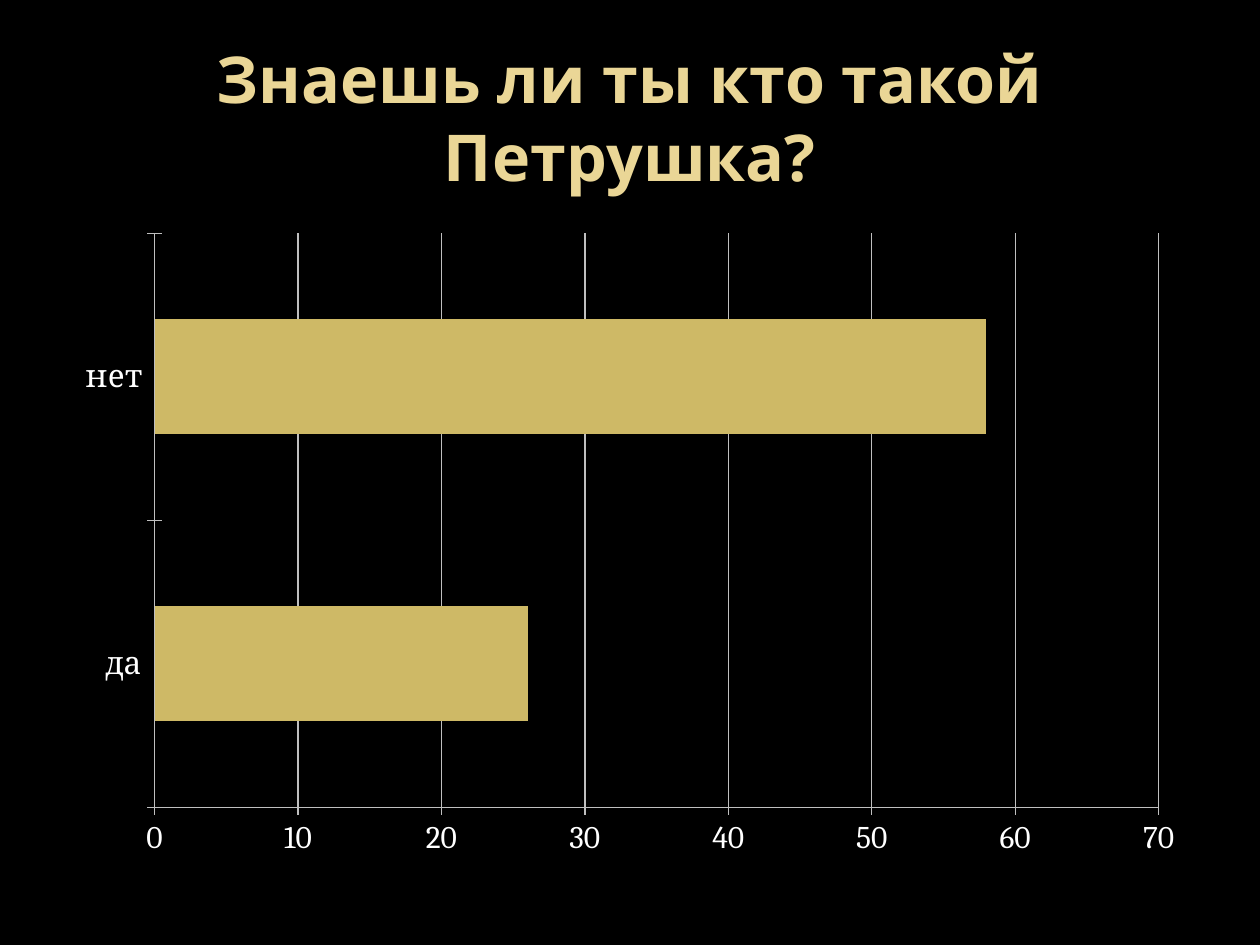
"""Build a survey slide with a title and a horizontal bar chart."""
import pptx
import pptx.chart.data
import pptx.dml.color
import pptx.enum.chart
import pptx.enum.text
import pptx.util

Inches = pptx.util.Inches
Pt = pptx.util.Pt


def paint(color_format, value):
    color_format.rgb = pptx.dml.color.RGBColor.from_string(value)


def fill_solid(fill, value):
    fill.solid()
    paint(fill.fore_color, value)


def write_text(box, text, *, font, size, color, bold=False):
    frame = box.text_frame
    frame.word_wrap = True
    frame.vertical_anchor = pptx.enum.text.MSO_ANCHOR.MIDDLE
    para = frame.paragraphs[0]
    para.alignment = pptx.enum.text.PP_ALIGN.CENTER
    span = para.add_run()
    span.text = text
    span.font.name = font
    span.font.size = Pt(size)
    span.font.bold = bold
    paint(span.font.color, color)


class SurveySlide:
    background = "000000"
    title_color = "EAD696"
    bar_color = "CEB966"
    line_color = "BFBFBF"
    label_color = "FFFFFF"
    title_font = "Open Sans"
    chart_font = "Cambria"

    def __init__(self, deck):
        self.page = deck.slides.add_slide(deck.slide_layouts[6])
        fill_solid(self.page.background.fill, self.background)

    def add_title(self, text, left, top, width, height):
        box = self.page.shapes.add_textbox(
            Inches(left), Inches(top), Inches(width), Inches(height))
        write_text(box, text, font=self.title_font, size=36.9,
                   color=self.title_color, bold=True)

    def style_axis(self, axis):
        axis.major_tick_mark = pptx.enum.chart.XL_TICK_MARK.CROSS
        axis.minor_tick_mark = pptx.enum.chart.XL_TICK_MARK.NONE
        axis.format.line.width = Pt(0.75)
        paint(axis.format.line.color, self.line_color)

    def add_bars(self, name, answers, left, top, width, height):
        data = pptx.chart.data.CategoryChartData()
        data.categories = list(answers)
        data.add_series(name, list(answers.values()))
        chart = self.page.shapes.add_chart(
            pptx.enum.chart.XL_CHART_TYPE.BAR_STACKED,
            Inches(left), Inches(top), Inches(width), Inches(height), data).chart
        chart.has_legend = False
        chart.has_title = False
        chart.font.name = self.chart_font
        chart.font.size = Pt(18)
        paint(chart.font.color, self.label_color)

        plot = chart.plots[0]
        plot.vary_by_categories = False
        plot.gap_width = 150
        plot.overlap = 100
        fill_solid(plot.series[0].format.fill, self.bar_color)

        self.style_axis(chart.category_axis)
        scale = chart.value_axis
        self.style_axis(scale)
        scale.minimum_scale, scale.maximum_scale, scale.major_unit = 0, 70, 10
        scale.has_major_gridlines = True
        grid = scale.major_gridlines.format.line
        grid.width = Pt(0.75)
        paint(grid.color, self.line_color)


def main():
    deck = pptx.Presentation()
    deck.slide_width = Inches(10)
    deck.slide_height = Inches(7.5)
    slide = SurveySlide(deck)
    slide.add_title("Знаешь ли ты кто такой Петрушка?", 0.5, 0.3, 9, 1.25)
    slide.add_bars("Series 1", {"да": 26, "нет": 58}, 0.5, 1.75, 9, 5.15)
    deck.save("out.pptx")


if __name__ == "__main__":
    main()
